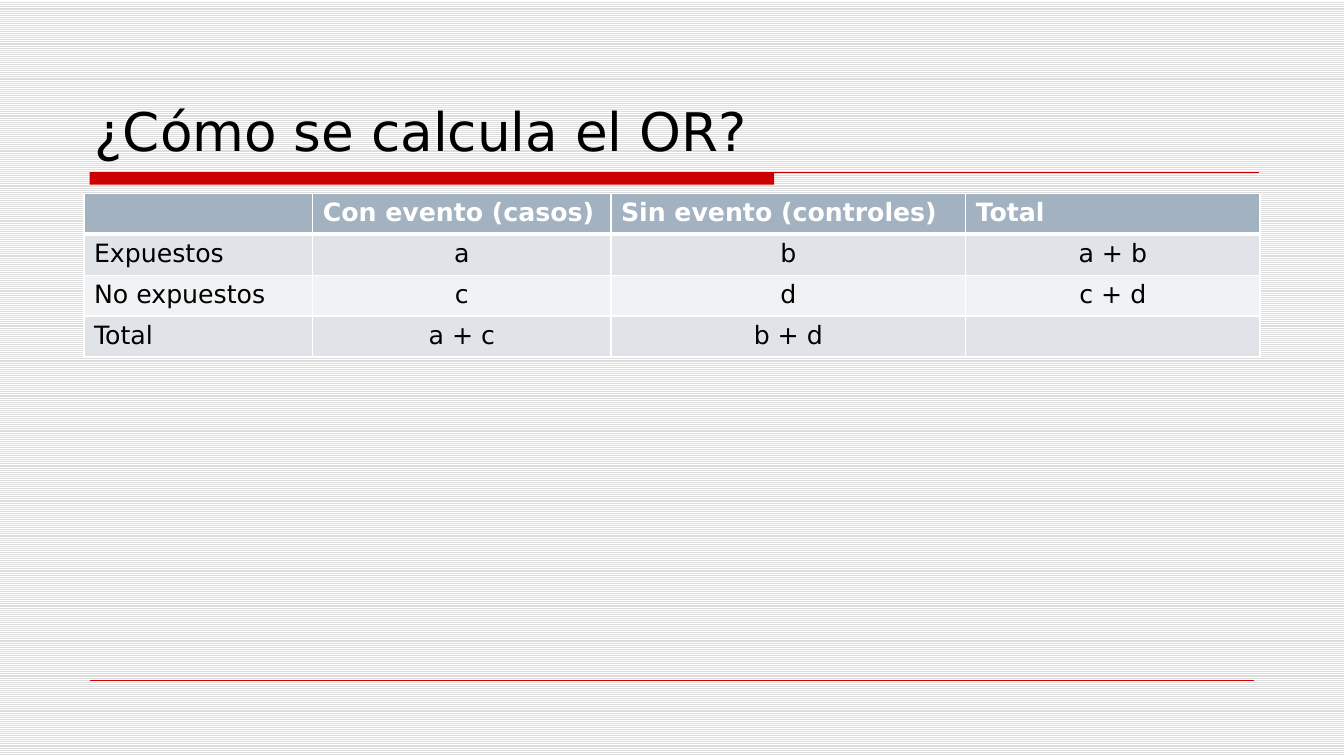
from lxml.etree import SubElement
from pptx import Presentation
from pptx.dml.color import RGBColor
from pptx.enum.dml import MSO_PATTERN
from pptx.enum.shapes import MSO_CONNECTOR, MSO_SHAPE
from pptx.enum.text import MSO_ANCHOR, MSO_AUTO_SIZE, PP_ALIGN
from pptx.oxml.ns import qn
from pptx.util import Pt

RED, BLACK, WHITE = "CC0000", "000000", "FFFFFF"
HEADER, BANDS = "A3B2C1", ("F0F2F4", "E0E4E9")


def rgb(value):
    return RGBColor.from_string(value)


class Deck:
    font = "DejaVu Sans"

    def __init__(self, width, height):
        self.prs = Presentation()
        self.prs.slide_width, self.prs.slide_height = Pt(width), Pt(height)
        self.slide = self.prs.slides.add_slide(self.prs.slide_layouts[5])

    def background(self, fore, back):
        fill = self.slide.background.fill
        fill.patterned()
        fill.pattern = MSO_PATTERN.LIGHT_HORIZONTAL
        fill.fore_color.rgb, fill.back_color.rgb = rgb(fore), rgb(back)

    def add_text(self, p, text, size, color, bold=False, align=PP_ALIGN.LEFT):
        p.alignment = align
        r = p.add_run()
        r.text = text
        r.font.name, r.font.size, r.font.bold = self.font, Pt(size), bold
        r.font.color.rgb = rgb(color)

    def title(self, text, x, y, w, h):
        sp = self.slide.shapes.title
        sp.left, sp.top, sp.width, sp.height = Pt(x), Pt(y), Pt(w), Pt(h)
        tf = sp.text_frame
        tf.word_wrap, tf.auto_size = True, MSO_AUTO_SIZE.NONE
        tf.vertical_anchor = MSO_ANCHOR.BOTTOM
        self.add_text(tf.paragraphs[0], text, 38, BLACK)

    def bar(self, x, y, w, h, color):
        sp = self.slide.shapes.add_shape(MSO_SHAPE.RECTANGLE, Pt(x), Pt(y), Pt(w), Pt(h))
        sp.shadow.inherit = False
        sp.fill.solid()
        sp.fill.fore_color.rgb = rgb(color)
        sp.line.fill.background()

    def rule(self, x1, x2, y, color, weight):
        line = self.slide.shapes.add_connector(
            MSO_CONNECTOR.STRAIGHT, Pt(x1), Pt(y), Pt(x2), Pt(y))
        line.line.color.rgb, line.line.width = rgb(color), Pt(weight)
        SubElement(line._element.spPr, qn("a:effectLst"))

    def borders(self, cell, color, **weights):
        tcPr = cell._tc.get_or_add_tcPr()
        for side, weight in weights.items():
            ln = SubElement(tcPr, qn(f"a:ln{side}"), w=str(Pt(weight)))
            fill = SubElement(ln, qn("a:solidFill"))
            SubElement(fill, qn("a:srgbClr"), val=color)

    def table(self, rows, x, y, widths, row_height):
        table = self.slide.shapes.add_table(
            len(rows), len(widths), Pt(x), Pt(y),
            Pt(sum(widths)), Pt(row_height * len(rows))).table
        for column, width in zip(table.columns, widths):
            column.width = Pt(width)
        for i, row in enumerate(rows):
            table.rows[i].height = Pt(row_height)
            head = i == 0
            for j, text in enumerate(row):
                cell = table.cell(i, j)
                self.borders(cell, WHITE, L=1, R=1, T=3 if i == 1 else 1, B=3 if head else 1)
                cell.fill.solid()
                cell.fill.fore_color.rgb = rgb(HEADER if head else BANDS[i % 2])
                if text:
                    align = PP_ALIGN.LEFT if head or j == 0 else PP_ALIGN.CENTER
                    self.add_text(cell.text_frame.paragraphs[0], text, 18,
                                  WHITE if head else BLACK, head, align)


def main():
    deck = Deck(960, 540)
    deck.background("DDDDDD", WHITE)
    deck.bar(64, 123, 489, 9, RED)
    deck.rule(64, 899.3, 123, RED, 0.75)
    deck.rule(64, 896, 486, RED, 0.25)
    deck.title("¿Cómo se calcula el OR?", 60.5, 23.8, 840, 95.8)
    deck.table([
        ("", "Con evento (casos)", "Sin evento (controles)", "Total"),
        ("Expuestos", "a", "b", "a + b"),
        ("No expuestos", "c", "d", "c + d"),
        ("Total", "a + c", "b + d", ""),
    ], 60, 138.2, (163.4, 213, 253.4, 210.2), 29.2)
    deck.prs.save("out.pptx")


if __name__ == "__main__":
    main()
